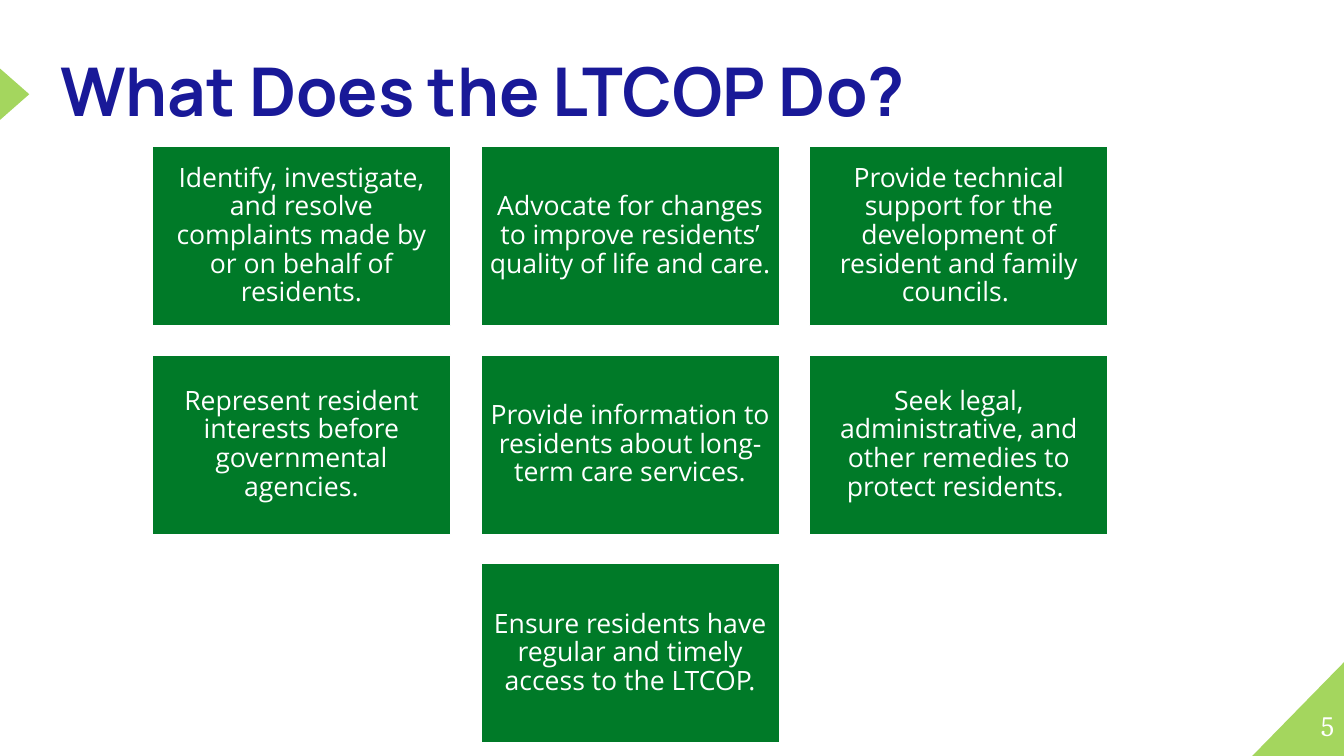
"""Build the slide listing what the LTCOP does."""
from pptx import Presentation
from pptx import util as u
from pptx.dml.color import RGBColor
from pptx.enum import shapes, text

PX = 9144
COLORS = {"green": "007A28", "lime": "A4D65E", "navy": "191998", "white": "FFFFFF"}
DUTIES = [
    "Identify, investigate, and resolve complaints made by or on behalf of residents.",
    "Advocate for changes to improve residents’ quality of life and care.",
    "Provide technical support for the development of resident and family councils. ",
    "Represent resident interests before governmental agencies.",
    "Provide information to residents about long-term care services.",
    "Seek legal, administrative, and other remedies to protect residents. ",
    "Ensure residents have regular and timely access to the LTCOP.",
]


class Deck:
    """Hold the style and the current slide."""

    def __init__(self, width, height):
        self.prs = Presentation()
        self.prs.slide_width, self.prs.slide_height = width * PX, height * PX
        self.slide = self.prs.slides.add_slide(self.prs.slide_layouts[6])

    def color(self, name):
        return RGBColor.from_string(COLORS[name])

    def shape(self, kind, box, fill, line=None):
        s = self.slide.shapes.add_shape(kind, *(v * PX for v in box))
        s.shadow.inherit = False
        s.fill.solid()
        s.fill.fore_color.rgb = self.color(fill)
        if line:
            s.line.color.rgb = self.color(line)
            s.line.width = u.Pt(1)
        else:
            s.line.fill.background()
        return s

    def set_text(self, s, words, size, font, color, align, bold=False, spacing=1.0):
        tf = s.text_frame
        tf.word_wrap = True
        tf.vertical_anchor = text.MSO_ANCHOR.MIDDLE
        tf.text = words
        p = tf.paragraphs[0]
        p.alignment = align
        p.line_spacing = spacing
        r = p.runs[0]
        r.font.size, r.font.name, r.font.bold = u.Pt(size), font, bold
        r.font.color.rgb = self.color(color)

    def label(self, box, *style, **options):
        s = self.slide.shapes.add_textbox(*(v * PX for v in box))
        self.set_text(s, *style, **options)

    def card(self, box, words):
        s = self.shape(shapes.MSO_SHAPE.RECTANGLE, box, "green", "white")
        tf = s.text_frame
        tf.margin_left = tf.margin_right = tf.margin_top = tf.margin_bottom = 8 * PX
        self.set_text(s, words, 19, "Open Sans", "white", text.PP_ALIGN.CENTER, spacing=0.9)


def main():
    deck = Deck(1333, 750)
    corner = deck.shape(shapes.MSO_SHAPE.RIGHT_TRIANGLE, (1242, 656, 92, 94), "lime")
    corner.element.spPr.xfrm.set("flipH", "1")
    marker = deck.shape(shapes.MSO_SHAPE.ISOSCELES_TRIANGLE, (-11, 79, 51, 29), "lime")
    marker.rotation = 90
    deck.label((1278, 692, 55, 55), "5", 20, "Cambria", "white", text.PP_ALIGN.RIGHT)
    deck.label((50, 43, 1150, 102), "What Does the LTCOP Do?", 48, "Manrope", "navy",
               text.PP_ALIGN.LEFT, bold=True, spacing=0.9)

    columns, width, height = 3, 296, 178
    for i, duty in enumerate(DUTIES):
        row, column = divmod(i, columns)
        in_row = min(columns, len(DUTIES) - row * columns)
        column += (columns - in_row) // 2
        deck.card((151 + column * 326, 145 + row * 207, width, height), duty)
    deck.prs.save("out.pptx")


if __name__ == "__main__":
    main()
